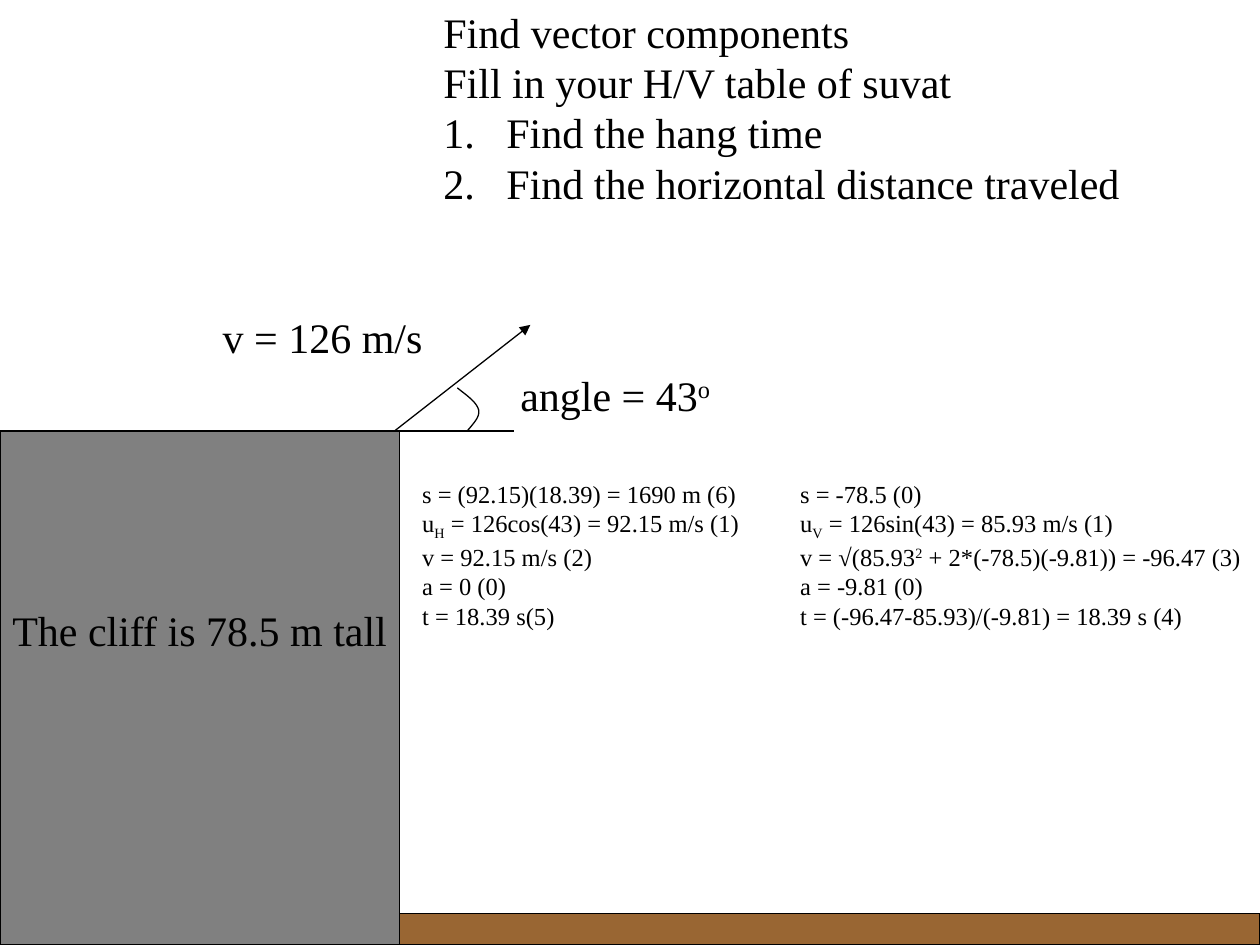
from lxml.etree import SubElement
from pptx import Presentation
from pptx.dml.color import RGBColor
from pptx.enum.shapes import MSO_CONNECTOR, MSO_SHAPE
from pptx.enum.text import MSO_AUTO_SIZE
from pptx.oxml.ns import qn
from pptx.util import Cm, Pt

COLORS = {"ink": "000000", "cliff": "808080", "ground": "996633"}
FONT = "Times New Roman"
SUB, SUPER = -25000, 30000
CLIFF_TOP, CLIFF_EDGE = 8.69, 8.05

# Each line is a list of (text, baseline shift) runs.
INSTRUCTIONS = [
    [("Find vector components", 0)],
    [("Fill in your H/V table of suvat", 0)],
    [("Find the hang time", 0)],
    [("Find the horizontal distance traveled", 0)],
]
SOLUTION = [
    [("s = (92.15)(18.39) = 1690 m (6)\ts = -78.5 (0)", 0)],
    [("u", 0), ("H", SUB), (" = 126cos(43) = 92.15 m/s (1)\tu", 0),
     ("V", SUB), (" = 126sin(43) = 85.93 m/s (1)", 0)],
    [("v = 92.15 m/s (2)\tv = √(85.93", 0), ("2", SUPER),
     (" + 2*(-78.5)(-9.81)) = -96.47 (3)", 0)],
    [("a = 0 (0)\ta = -9.81 (0)", 0)],
    [("t = 18.39 s(5)\tt = (-96.47-85.93)/(-9.81) = 18.39 s (4)", 0)],
]


def rgb(name):
    return RGBColor.from_string(COLORS[name])


def outline(shape):
    shape.line.color.rgb = rgb("ink")
    shape.line.width = Pt(0.75)


def add_block(slide, left, top, width, height, color):
    block = slide.shapes.add_shape(
        MSO_SHAPE.RECTANGLE, Cm(left), Cm(top), Cm(width), Cm(height))
    block.shadow.inherit = False
    block.fill.solid()
    block.fill.fore_color.rgb = rgb(color)
    outline(block)


def add_line(slide, start, end, arrow=False):
    line = slide.shapes.add_connector(
        MSO_CONNECTOR.STRAIGHT, *(Cm(value) for value in start + end))
    outline(line)
    if arrow:
        SubElement(line.line._get_or_add_ln(), qn("a:tailEnd"), type="triangle")
    SubElement(line._element.spPr, qn("a:effectLst"))


def bezier(p0, p1, p2, p3, steps=12):
    """Return points along a cubic curve, without its start."""
    points = []
    for step in range(1, steps + 1):
        t = step / steps
        weights = ((1 - t) ** 3, 3 * t * (1 - t) ** 2, 3 * t * t * (1 - t), t ** 3)
        points.append(tuple(
            sum(w * c for w, c in zip(weights, axis)) for axis in zip(p0, p1, p2, p3)))
    return points


def add_angle_arc(slide):
    start, middle, end = (9.22, 7.82), (9.65, 8.26), (9.42, CLIFF_TOP)
    points = bezier(start, (9.42, 7.98), (9.6, 8.1), middle)
    points += bezier(middle, (9.68, 8.41), (9.55, 8.53), end)
    builder = slide.shapes.build_freeform(Cm(start[0]), Cm(start[1]))
    builder.add_line_segments([(Cm(x), Cm(y)) for x, y in points], close=False)
    arc = builder.convert_to_shape()
    arc.shadow.inherit = False
    arc.fill.background()
    outline(arc)


def hang_indent(paragraph, numbered):
    properties = paragraph._p.get_or_add_pPr()
    properties.set("marL", str(Cm(1.27)))
    properties.set("indent", str(-Cm(1.27)))
    if numbered:
        SubElement(properties, qn("a:buAutoNum"), type="arabicPeriod")


def add_column_stop(paragraph):
    stops = SubElement(paragraph._p.get_or_add_pPr(), qn("a:tabLst"))
    SubElement(stops, qn("a:tab"), pos=str(Cm(7.62)), algn="l")


def add_text(slide, left, top, width, height, lines, size=24, wrap=False, layout=None):
    """Add a text box; layout(paragraph, index) sets indents and tabs."""
    box = slide.shapes.add_textbox(Cm(left), Cm(top), Cm(width), Cm(height))
    frame = box.text_frame
    frame.word_wrap = wrap
    frame.auto_size = MSO_AUTO_SIZE.SHAPE_TO_FIT_TEXT
    for index, line in enumerate(lines):
        paragraph = frame.add_paragraph() if index else frame.paragraphs[0]
        if layout:
            layout(paragraph, index)
        paragraph.font.name = FONT
        paragraph.font.size = Pt(size)
        paragraph.font.color.rgb = rgb("ink")
        for text, baseline in line:
            run = paragraph.add_run()
            run.text = text
            if baseline:
                run._r.get_or_add_rPr().set("baseline", str(baseline))


def main():
    deck = Presentation()
    deck.slide_width, deck.slide_height = Cm(25.4), Cm(19.05)
    slide = deck.slides.add_slide(deck.slide_layouts[6])

    add_block(slide, 6.99, 18.41, 18.41, 0.64, "ground")
    add_block(slide, 0, CLIFF_TOP, CLIFF_EDGE, 10.36, "cliff")
    add_line(slide, (7.95, CLIFF_TOP), (10.69, 6.55), arrow=True)
    add_angle_arc(slide)
    add_text(slide, 10.24, 7.32, 4.37, 1.27, [[("angle = 43", 0), ("o", SUPER)]])
    add_text(slide, 4.24, 6.15, 4.55, 1.27, [[("v = 126 m/s", 0)]])
    add_text(slide, 8.69, 0, 16.71, 4.32, INSTRUCTIONS, wrap=True,
             layout=lambda paragraph, index: hang_indent(paragraph, index >= 2))
    add_text(slide, 0, 12.07, 8.08, 1.27, [[("The cliff is 78.5 m tall", 0)]])
    add_line(slide, (CLIFF_EDGE, CLIFF_TOP), (10.36, CLIFF_TOP))
    add_text(slide, 8.26, 9.53, 17.14, 3.2, SOLUTION, size=14, wrap=True,
             layout=lambda paragraph, index: add_column_stop(paragraph))

    deck.save("out.pptx")


if __name__ == "__main__":
    main()
